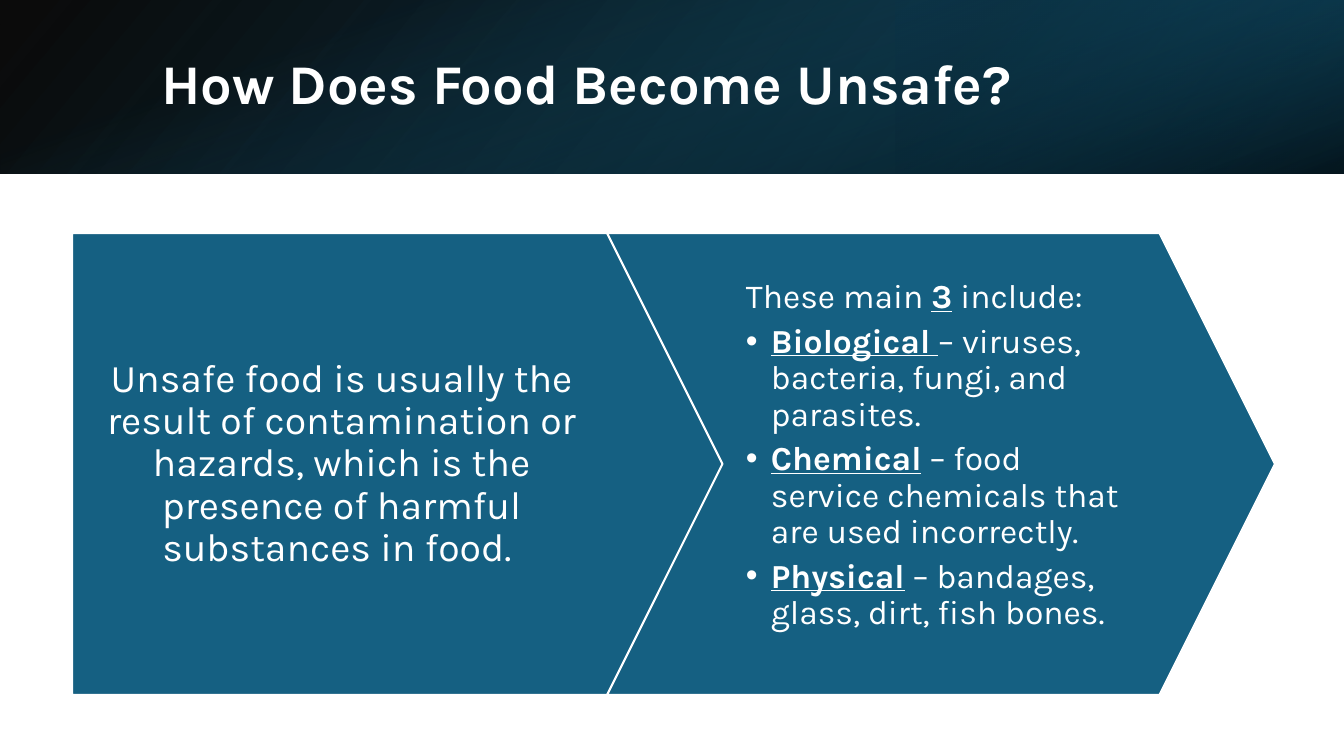
import pptx
import pptx.util
import pptx.dml.color
import pptx.enum.shapes
import pptx.enum.text
from lxml import etree

# Content: a run is (text, bold, underlined)
TITLE = [[("How Does Food Become Unsafe?", True, False)]]
CAUSE = [[("Unsafe food is usually the result of contamination or hazards, "
           "which is the presence of harmful substances in food. ", False, False)]]
HAZARD_INTRO = [("These main ", False, False), ("3", True, True), (" include:", False, False)]
HAZARDS = [
    [("Biological", True, True), (" ", False, True),
     ("– viruses, bacteria, fungi, and parasites.", False, False)],
    [("Chemical", True, True),
     (" – food service chemicals that are used incorrectly.", False, False)],
    [("Physical", True, True), (" – bandages, glass, dirt, fish bones.", False, False)],
]

COLORS = {"panel": "156082", "text": "FFFFFF", "black": "000000",
          "navy": "104862", "deep": "0B3041"}
FONT = "Karla"

# Geometry in px
PX = 914400 / 100.8
SLIDE_W, SLIDE_H = 1344, 756
HEADER_H = 174
PANEL_X, PANEL_Y, PANEL_W, PANEL_H = 72, 233, 668, 462
PANEL_STEP = 535
BULLET_INDENT = 25

# Header layers: box, rotation, flipped, angle, stops (percent, colour, opacity percent)
SIDEWAYS = (SLIDE_W - HEADER_H) // 2
HEADER_LAYERS = [
    ((0, 0, SLIDE_W, HEADER_H), 0, True, 140,
     [(0, "black", 96), (100, "navy", 100)]),
    ((SLIDE_W * 2 // 3, 0, SLIDE_W // 3, HEADER_H), 180, True, 320,
     [(19, "deep", 68), (100, "panel", 79)]),
    ((SIDEWAYS, -SIDEWAYS, HEADER_H, SLIDE_W), 90, False, 340,
     [(23, "panel", 0), (99, "black", 74)]),
]

SHAPE = pptx.enum.shapes.MSO_SHAPE
ALIGN = pptx.enum.text.PP_ALIGN
ANCHOR = pptx.enum.text.MSO_ANCHOR
A = "{http://schemas.openxmlformats.org/drawingml/2006/main}"


def px(length):
    return pptx.util.Emu(round(length * PX))


def rgb(name):
    return pptx.dml.color.RGBColor.from_string(COLORS[name])


def set_all(target, values):
    for name, value in values.items():
        setattr(target, name, value)


def add_shape(kind, box):
    shape = slide.shapes.add_shape(kind, *map(px, box))
    shape.shadow.inherit = False
    return shape


def add_header_layer(box, rotation, flipped, angle, stops):
    layer = add_shape(SHAPE.RECTANGLE, box)
    layer.rotation = rotation
    layer.line.fill.background()
    properties = layer.element.spPr
    if flipped:
        properties.xfrm.set("flipH", "1")
    gradient = etree.Element(A + "gradFill", rotWithShape="1")
    stop_list = etree.SubElement(gradient, A + "gsLst")
    for position, color, opacity in stops:
        stop = etree.SubElement(stop_list, A + "gs", pos=str(position * 1000))
        tint = etree.SubElement(stop, A + "srgbClr", val=COLORS[color])
        etree.SubElement(tint, A + "alpha", val=str(opacity * 1000))
    etree.SubElement(gradient, A + "lin", ang=str(angle * 60000), scaled="0")
    properties.find(A + "prstGeom").addnext(gradient)


def add_text(box, paragraphs, size, anchor, margins, **paragraph_format):
    frame = slide.shapes.add_textbox(*map(px, box)).text_frame
    left, top, right, bottom = map(px, margins)
    set_all(frame, {"word_wrap": True, "vertical_anchor": anchor,
                    "margin_left": left, "margin_top": top,
                    "margin_right": right, "margin_bottom": bottom})
    for index, runs in enumerate(paragraphs):
        paragraph = frame.paragraphs[0] if index == 0 else frame.add_paragraph()
        set_all(paragraph, {"line_spacing": 0.9, **paragraph_format})
        for words, bold, underlined in runs:
            run = paragraph.add_run()
            run.text = words
            set_all(run.font, {"name": FONT, "size": pptx.util.Pt(size),
                               "bold": bold, "underline": underlined})
            run.font.color.rgb = rgb("text")
    return frame


def add_bullet(paragraph):
    properties = paragraph._p.get_or_add_pPr()
    properties.set("marL", str(px(BULLET_INDENT)))
    properties.set("indent", str(-px(BULLET_INDENT)))
    etree.SubElement(properties, A + "buFont", typeface="Arial")
    etree.SubElement(properties, A + "buChar", char="•")


deck = pptx.Presentation()
set_all(deck, {"slide_width": px(SLIDE_W), "slide_height": px(SLIDE_H)})
slide = deck.slides.add_slide(deck.slide_layouts[6])

# Header
for header_layer in HEADER_LAYERS:
    add_header_layer(*header_layer)
add_text((151, 38, 1107, 97), TITLE, 40, ANCHOR.MIDDLE, (10, 5, 10, 5))

# Arrow panels
for step, kind in enumerate((SHAPE.PENTAGON, SHAPE.CHEVRON)):
    panel = add_shape(kind, (PANEL_X + step * PANEL_STEP, PANEL_Y, PANEL_W, PANEL_H))
    panel.adjustments[0] = 0.25
    panel.fill.solid()
    panel.fill.fore_color.rgb = rgb("panel")
    panel.line.color.rgb = rgb("text")
    panel.line.width = pptx.util.Pt(1.5)

# Panel texts
add_text((PANEL_X, PANEL_Y, 611, PANEL_H), CAUSE, 28, ANCHOR.MIDDLE, (23, 8, 95, 8),
         alignment=ALIGN.CENTER, space_before=pptx.util.Pt(6), space_after=pptx.util.Pt(18))
hazard_list = add_text((722, PANEL_Y, 437, PANEL_H), [HAZARD_INTRO] + HAZARDS, 24,
                       ANCHOR.TOP, (24, 47, 23, 6), space_after=pptx.util.Pt(6))
for hazard in hazard_list.paragraphs[1:]:
    add_bullet(hazard)

deck.save("out.pptx")
